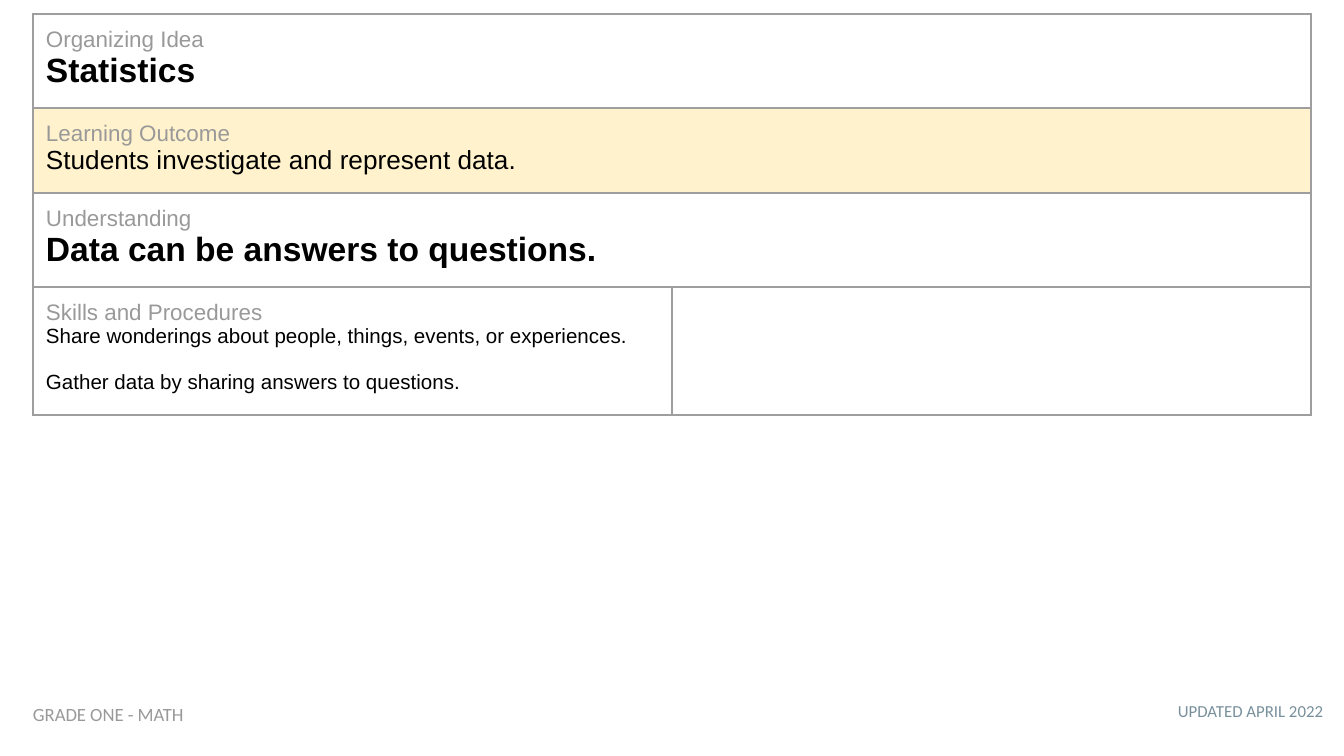
from lxml import etree
from pptx import Presentation, util as u
from pptx.dml.color import RGBColor
from pptx.enum import text
from pptx.oxml import ns

GREY, BLACK, BORDER = "999999", "000000", "9E9E9E"
INSET = 13

# Content: row height, fill, lines of (text, size, bold, space before)
ROWS = [
    (94, None, [("Organizing Idea", 12, False, 0), ("Statistics", 18, True, 0)]),
    (85, "FFF2CC", [("Learning Outcome", 12, False, 0),
                    ("Students investigate and represent data.", 14, False, 0)]),
    (94, None, [("Understanding", 12, False, 0),
                ("Data can be answers to questions.", 18, True, 0)]),
    (128, None, [("Skills and Procedures", 12, False, 0),
                 ("Share wonderings about people, things, events, or experiences.",
                  11, False, 0),
                 ("Gather data by sharing answers to questions.", 11, False, 12.5)]),
]
# Footers: text, box, size, colour, alignment
FOOTERS = [
    ("UPDATED APRIL 2022", (973, 691, 363, 47), 9, "78909C", text.PP_ALIGN.RIGHT),
    ("GRADE ONE - MATH", (20, 692, 405, 50), 10, GREY, text.PP_ALIGN.LEFT),
]
TABLE_LEFT, TABLE_TOP, COLUMN_WIDTH = 33, 14, 639


def px(value):
    return u.Emu(round(value * 914400 / 134.4))


def color(value):
    return RGBColor.from_string(value)


def style(paragraph, font, size, value, bold=False):
    for run in paragraph.runs:
        run.font.name = font
        run.font.size = u.Pt(size)
        run.font.bold = bold
        run.font.color.rgb = color(value)


def set_margins(box):
    box.margin_left = box.margin_right = px(INSET)
    box.margin_top = box.margin_bottom = px(INSET)


def format_cell(cell, fill):
    set_margins(cell)
    properties = cell._tc.get_or_add_tcPr()
    for side in ("lnL", "lnR", "lnT", "lnB"):
        line = etree.SubElement(properties, ns.qn(f"a:{side}"), w=str(u.Pt(0.75)))
        solid = etree.SubElement(line, ns.qn("a:solidFill"))
        etree.SubElement(solid, ns.qn("a:srgbClr"), val=BORDER)
    if fill:
        cell.fill.solid()
        cell.fill.fore_color.rgb = color(fill)
    else:
        cell.fill.background()


def add_outcome_table(slide):
    height = sum(row[0] for row in ROWS)
    table = slide.shapes.add_table(
        len(ROWS), 2, px(TABLE_LEFT), px(TABLE_TOP),
        px(2 * COLUMN_WIDTH), px(height)).table
    table.first_row = table.horz_banding = False
    for column in table.columns:
        column.width = px(COLUMN_WIDTH)
    for index, (row_height, fill, lines) in enumerate(ROWS):
        table.rows[index].height = px(row_height)
        first, second = table.cell(index, 0), table.cell(index, 1)
        for cell in (first, second):
            format_cell(cell, fill)
        # Only the last row keeps two columns
        if index < len(ROWS) - 1:
            first.merge(second)
        first.text_frame.text = "\n".join(line[0] for line in lines)
        for number, paragraph in enumerate(first.text_frame.paragraphs):
            _, size, bold, space = lines[number]
            style(paragraph, "Arial", size, BLACK if number else GREY, bold)
            paragraph.space_before = u.Pt(space)


def add_footer(slide, words, box, size, value, alignment):
    frame = slide.shapes.add_textbox(*map(px, box)).text_frame
    frame.word_wrap = True
    set_margins(frame)
    frame.text = words
    paragraph = frame.paragraphs[0]
    paragraph.alignment = alignment
    style(paragraph, "Calibri", size, value)


def main():
    presentation = Presentation()
    presentation.slide_width, presentation.slide_height = px(1344), px(756)
    slide = presentation.slides.add_slide(presentation.slide_layouts[6])
    add_outcome_table(slide)
    for footer in FOOTERS:
        add_footer(slide, *footer)
    presentation.save("out.pptx")


if __name__ == "__main__":
    main()
